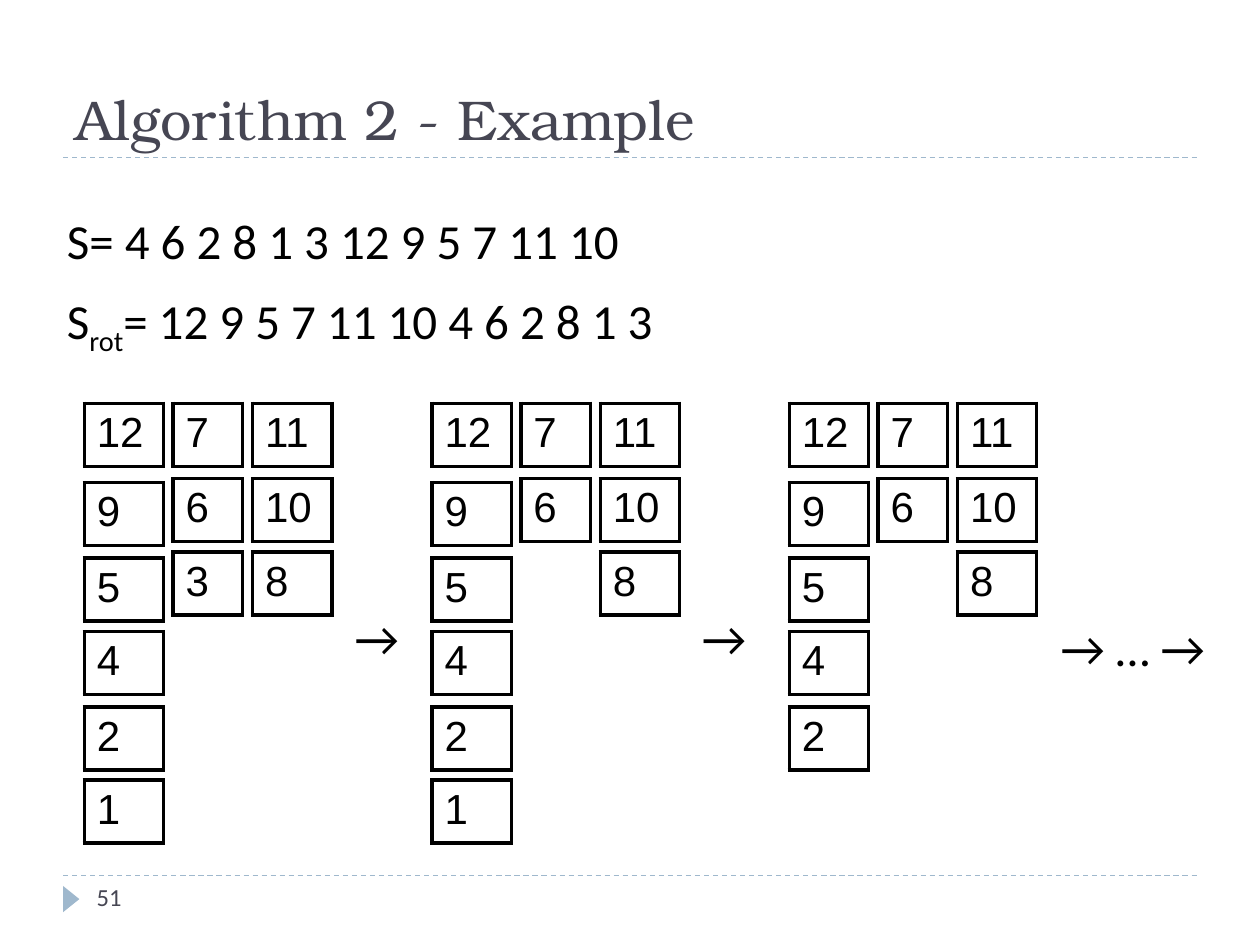
from dataclasses import dataclass

from lxml import etree
from pptx import Presentation, util as u
from pptx.dml.color import RGBColor
from pptx.enum import dml, shapes, text
from pptx.oxml.ns import qn

INK, ACCENT, HEADING = "000000", "9FB8CD", "464653"
ROW_HEIGHT = 1.27


@dataclass(frozen=True)
class Column:
    offset: float
    width: float
    tops: tuple[float, ...]


@dataclass(frozen=True)
class Stage:
    left: float
    columns: tuple[str, str, str]


@dataclass(frozen=True)
class Label:
    words: str
    left: float
    top: float
    width: float
    height: float
    size: int = 28
    font: str = "Calibri"
    color: str = INK
    anchor: text.MSO_ANCHOR = text.MSO_ANCHOR.TOP
    wrap: bool = True
    subscript: str = ""


SIDE_TOPS = (8.13, 9.65, 11.13)
COLUMNS = (
    Column(0, 1.6, (8.13, 9.73, 11.25, 12.73, 14.25, 15.72)),
    Column(1.79, 1.4, SIDE_TOPS),
    Column(3.39, 1.6, SIDE_TOPS),
)
STAGES = (
    Stage(1.7, ("12 9 5 4 2 1", "7 6 3", "11 10 8")),
    Stage(8.71, ("12 9 5 4 2 1", "7 6", "11 10 8")),
    Stage(15.91, ("12 9 5 4 2", "7 6", "11 10 8")),
)
LABELS = (
    Label("51", 1.7, 17.65, 5.5, 1.02, size=14, color=HEADING),
    Label("Algorithm 2 - Example", 1.27, 0.43, 22.86, 2.75, size=32,
          font="TeX Gyre Bonum", color=HEADING, anchor=text.MSO_ANCHOR.BOTTOM),
    Label("S= 4 6 2 8 1 3 12 9 5 7 11 10", 1.1, 4.11, 14.6, 1.45),
    Label("S|rot|= 12 9 5 7 11 10 4 6 2 8 1 3", 1.1, 5.73, 14.6, 1.45, subscript="rot"),
    Label("→", 6.9, 12.12, 1.47, 1.45, wrap=False),
    Label("→", 13.9, 12.12, 1.47, 1.45, wrap=False),
    Label("→ … →", 21.13, 12.32, 3.99, 1.45, wrap=False),
)


def rgb(color: str) -> RGBColor:
    return RGBColor.from_string(color)


def style_run(run, size: int, font: str, color: str) -> None:
    run.font.size = u.Pt(size)
    run.font.name = font
    run.font.color.rgb = rgb(color)


def draw_label(slide, label: Label) -> None:
    box = slide.shapes.add_textbox(
        u.Cm(label.left), u.Cm(label.top), u.Cm(label.width), u.Cm(label.height))
    frame = box.text_frame
    frame.word_wrap = label.wrap
    frame.vertical_anchor = label.anchor
    for words in label.words.split("|"):
        run = frame.paragraphs[0].add_run()
        run.text = words
        style_run(run, label.size, label.font, label.color)
        if words == label.subscript:
            run.font._element.set("baseline", "-25000")


def draw_rule(slide, height: float) -> None:
    rule = slide.shapes.add_connector(
        shapes.MSO_CONNECTOR.STRAIGHT, u.Cm(1.27), u.Cm(height), u.Cm(24.13), u.Cm(height))
    rule.line.color.rgb = rgb(ACCENT)
    rule.line.width = u.Pt(0.75)
    rule.line.dash_style = dml.MSO_LINE.DASH
    etree.SubElement(rule._element.spPr, qn("a:effectLst"))


def draw_marker(slide) -> None:
    marker = slide.shapes.add_shape(
        shapes.MSO_SHAPE.ISOSCELES_TRIANGLE, u.Cm(1.17), u.Cm(17.96), u.Cm(0.53), u.Cm(0.33))
    marker.rotation = 90
    marker.shadow.inherit = False
    marker.fill.solid()
    marker.fill.fore_color.rgb = rgb(ACCENT)
    marker.line.fill.background()


def border_cell(cell, color: str, width: float) -> None:
    properties = cell._tc.get_or_add_tcPr()
    for side in ("lnL", "lnR", "lnT", "lnB"):
        edge = etree.SubElement(properties, qn(f"a:{side}"), w=str(u.Pt(width)))
        fill = etree.SubElement(edge, qn("a:solidFill"))
        etree.SubElement(fill, qn("a:srgbClr"), val=color)


def draw_number(slide, number: str, left: float, top: float, width: float) -> None:
    grid = slide.shapes.add_table(
        1, 1, u.Cm(left), u.Cm(top), u.Cm(width), u.Cm(ROW_HEIGHT)).table
    grid.first_row = grid.horz_banding = False
    cell = grid.cell(0, 0)
    border_cell(cell, INK, 2.25)
    cell.fill.background()
    cell.text_frame.text = number
    style_run(cell.text_frame.paragraphs[0].runs[0], 24, "Arial", INK)


def draw_stage(slide, stage: Stage) -> None:
    for column, numbers in zip(COLUMNS, stage.columns):
        for number, top in zip(numbers.split(), column.tops):
            draw_number(slide, number, stage.left + column.offset, top, column.width)


def main() -> None:
    """Build the Algorithm 2 example slide."""
    deck = Presentation()
    deck.slide_width, deck.slide_height = u.Cm(25.4), u.Cm(19.05)
    slide = deck.slides.add_slide(deck.slide_layouts[6])
    for height in (17.65, 3.18):
        draw_rule(slide, height)
    draw_marker(slide)
    for label in LABELS:
        draw_label(slide, label)
    for stage in STAGES:
        draw_stage(slide, stage)
    deck.save("out.pptx")


if __name__ == "__main__":
    main()
